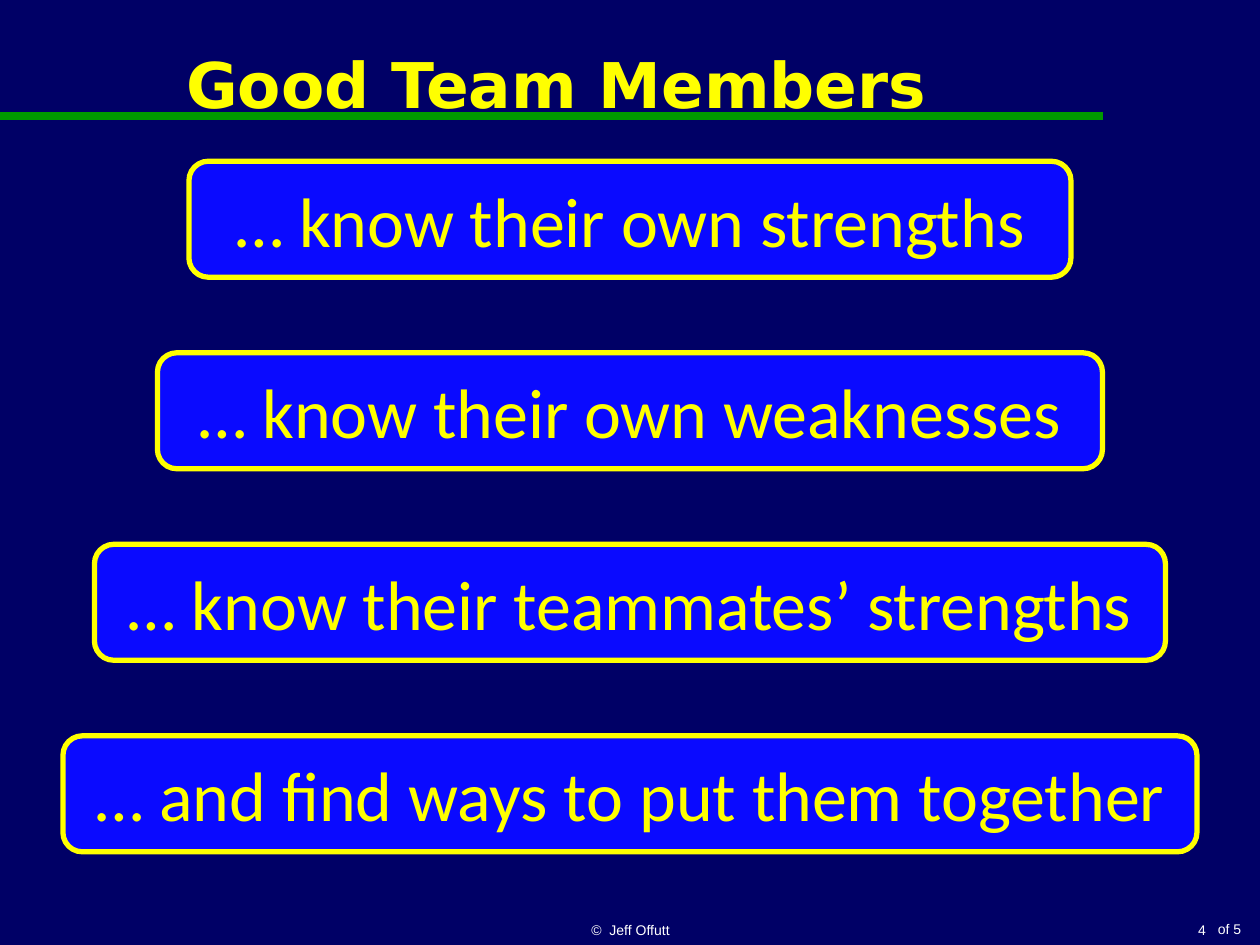
import pptx
import pptx.util
import pptx.dml.color
import pptx.enum.shapes
import pptx.enum.text
import pptx.oxml
import pptx.oxml.ns
from dataclasses import dataclass
from pptx.util import Inches

NAVY = pptx.dml.color.RGBColor(0x00, 0x00, 0x66)
BLUE = pptx.dml.color.RGBColor(0x0A, 0x0A, 0xFF)
YELLOW = pptx.dml.color.RGBColor(0xFF, 0xFF, 0x00)
GREEN = pptx.dml.color.RGBColor(0x00, 0x99, 0x00)
WHITE = pptx.dml.color.RGBColor(0xFF, 0xFF, 0xFF)

Align = pptx.enum.text.PP_ALIGN
Anchor = pptx.enum.text.MSO_ANCHOR

TITLE_FONT = {"name": "DejaVu Sans", "size": pptx.util.Pt(36), "bold": True}
TRAIT_FONT = {"name": "Calibri", "size": pptx.util.Pt(40)}
FOOTER_FONT = {"name": "Arial", "size": pptx.util.Pt(8)}

SLIDE_WIDTH = 10
TRAIT_TOP, TRAIT_HEIGHT, TRAIT_STEP = 1.28, 0.92, 1.52


@dataclass
class Trait:
    text: str
    width: float


@dataclass
class Label:
    text: str
    left: float
    top: float
    width: float
    height: float
    align: Align
    anchor: Anchor
    font: dict
    color: pptx.dml.color.RGBColor
    wrap: bool = True


TRAITS = [
    Trait("… know their own strengths", 7),
    Trait("… know their own weaknesses", 7.5),
    Trait("… know their teammates’ strengths", 8.5),
    Trait("… and find ways to put them together", 9),
]

LABELS = [
    Label("Good Team Members", 0.08, 0, 8.67, 1.33,
          Align.CENTER, Anchor.MIDDLE, TITLE_FONT, YELLOW),
    Label("©  Jeff Offutt", 3.42, 7.17, 3.17, 0.33,
          Align.CENTER, Anchor.BOTTOM, FOOTER_FONT, WHITE),
    Label("4", 7.92, 7.17, 1.75, 0.33,
          Align.RIGHT, Anchor.BOTTOM, FOOTER_FONT, WHITE),
    Label("of 5", 9.56, 7.26, 0.39, 0.24,
          Align.RIGHT, Anchor.TOP, FOOTER_FONT, WHITE, wrap=False),
]


def write_text(shape, text: str, align: Align, anchor: Anchor,
               font: dict, color: pptx.dml.color.RGBColor, wrap: bool = True) -> None:
    frame = shape.text_frame
    frame.word_wrap = wrap
    frame.vertical_anchor = anchor
    paragraph = frame.paragraphs[0]
    paragraph.alignment = align
    run = paragraph.add_run()
    run.text = text
    for attribute, value in font.items():
        setattr(run.font, attribute, value)
    run.font.color.rgb = color


def add_label(slide, label: Label) -> None:
    box = slide.shapes.add_textbox(Inches(label.left), Inches(label.top),
                                   Inches(label.width), Inches(label.height))
    write_text(box, label.text, label.align, label.anchor,
               label.font, label.color, label.wrap)


def add_trait(slide, trait: Trait, row: int) -> None:
    card = slide.shapes.add_shape(
        pptx.enum.shapes.MSO_SHAPE.ROUNDED_RECTANGLE,
        Inches((SLIDE_WIDTH - trait.width) / 2),
        Inches(TRAIT_TOP + row * TRAIT_STEP),
        Inches(trait.width), Inches(TRAIT_HEIGHT))
    card.shadow.inherit = False
    card.fill.solid()
    card.fill.fore_color.rgb = BLUE
    card.line.color.rgb = YELLOW
    card.line.width = pptx.util.Pt(3)
    write_text(card, trait.text, Align.CENTER, Anchor.MIDDLE, TRAIT_FONT, YELLOW)


def add_title_rule(slide) -> None:
    rule = slide.shapes.add_connector(
        pptx.enum.shapes.MSO_CONNECTOR.STRAIGHT,
        Inches(0), Inches(0.92), Inches(8.75), Inches(0.92))
    rule.line.color.rgb = GREEN
    rule.line.width = pptx.util.Pt(4.5)
    properties = rule._element.spPr
    properties.append(pptx.oxml.parse_xml(
        f"<a:effectLst {pptx.oxml.ns.nsdecls('a')}/>"))


def main() -> None:
    presentation = pptx.Presentation()
    presentation.slide_width = Inches(SLIDE_WIDTH)
    presentation.slide_height = Inches(7.5)
    slide = presentation.slides.add_slide(presentation.slide_layouts[6])

    # Background and rule under the title
    slide.background.fill.solid()
    slide.background.fill.fore_color.rgb = NAVY
    add_title_rule(slide)

    # Title and footer
    for label in LABELS:
        add_label(slide, label)

    # Traits, centred on the slide
    for row, trait in enumerate(TRAITS):
        add_trait(slide, trait, row)

    presentation.save("out.pptx")


if __name__ == "__main__":
    main()
